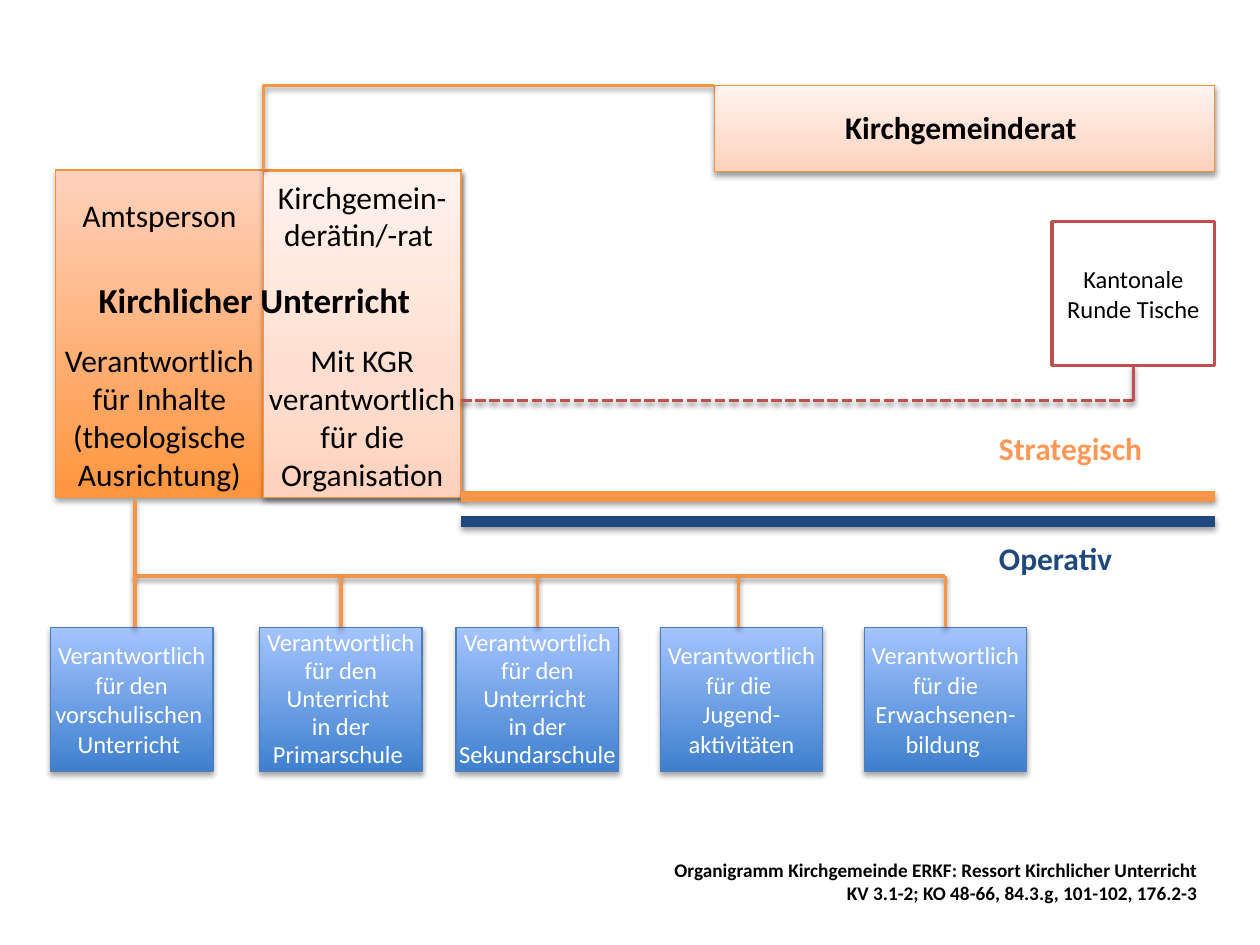
"""Build the organisation chart of the church education department."""
from copy import deepcopy

from lxml.etree import SubElement
from pptx import Presentation
from pptx.dml.color import RGBColor
from pptx.enum.dml import MSO_LINE
from pptx.enum.shapes import MSO_CONNECTOR as Link, MSO_SHAPE as Form
from pptx.enum.text import MSO_ANCHOR as Anchor, PP_ALIGN as Align
from pptx.oxml.ns import qn
from pptx.util import Inches, Pt

BLACK = RGBColor(0, 0, 0)
WHITE = RGBColor(255, 255, 255)
ORANGE = RGBColor(0xF7, 0x96, 0x46)
ORANGE_EDGE = RGBColor(0xF6, 0x92, 0x40)
ORANGE_TEXT = RGBColor(0xFF, 0x98, 0x56)
NAVY = RGBColor(0x1F, 0x49, 0x7D)
BLUE_EDGE = RGBColor(0x4B, 0x7E, 0xBC)
RED = RGBColor(0xC0, 0x50, 0x4D)
PEACH = RGBColor(0xFF, 0xD2, 0xBD)
DEEP_STOPS = [(0, RGBColor(0xFF, 0x95, 0x3E)), (1, PEACH)]
PALE_STOPS = [(0, PEACH), (0.35, RGBColor(0xFF, 0xDE, 0xD0)), (1, RGBColor(0xFF, 0xF2, 0xED))]
BLUE_STOPS = [(0, RGBColor(0x3F, 0x80, 0xCE)), (1, RGBColor(0xA4, 0xC4, 0xFF))]

NARROW = 0.02
UNIT_WIDTH, UNIT_HEIGHT, UNIT_TOP, BRANCH_TOP = 1.29, 1.14, 4.98, 4.57
STEM_X, RIGHT_EDGE, DEPARTMENT_RIGHT, DASH_Y = 1.07, 9.64, 3.66, 3.18

PANELS = [
    ((0.44, 1.35, 3.22, 2.6), Form.FLOWCHART_PROCESS, DEEP_STOPS),
    ((2.09, 1.36, 1.57, 2.59), Form.FLOWCHART_PROCESS, PALE_STOPS),
    ((5.67, 0.68, 3.97, 0.68), Form.RECTANGLE, PALE_STOPS),
]
LABELS = [
    ("Kirchlicher Unterricht ", (0.44, 2.16, 3.22, 0.44), dict(size=20, bold=True)),
    ("Mit KGR verantwortlich für die Organisation", (2.09, 2.66, 1.57, 1.31), dict(inset=NARROW)),
    ("Kirchgemein-derätin/-rat ", (2.09, 1.36, 1.57, 0.71), {}),
    ("Amtsperson", (0.44, 1.51, 1.65, 0.4), {}),
    ("Verantwortlich für Inhalte (theologische Ausrichtung)", (0.44, 2.66, 1.65, 1.31),
     dict(inset=NARROW)),
    ("Strategisch", (7.83, 3.36, 1.62, 0.4), dict(color=ORANGE_TEXT, bold=True, align=Align.LEFT)),
    ("Operativ", (7.83, 4.23, 1.68, 0.4), dict(color=NAVY, bold=True, align=Align.LEFT)),
    ("Kirchgemeinderat ", (5.67, 0.81, 3.97, 0.4), dict(bold=True)),
]
UNITS = [
    ("Verantwortlich für den vorschulischen  Unterricht ", 0.4, STEM_X, None),
    ("Verantwortlich für den Unterricht \vin der Primarschule ", 2.06, None, 0.95),
    ("Verantwortlich für den Unterricht \vin der Sekundarschule ", 3.62, None, 0.95),
    ("Verantwortlich für die \vJugend-aktivitäten", 5.24, 5.86, None),
    ("Verantwortlich für die\vErwachsenen-bildung ", 6.86, None, None),
]
LEVEL_BARS = [(3.94, ORANGE), (4.14, NAVY)]
TITLE = ("Organigramm Kirchgemeinde ERKF: Ressort Kirchlicher Unterricht \n"
         "KV 3.1-2; KO 48-66, 84.3.g, 101-102, 176.2-3 ")


def write(shape, text, size=18, color=BLACK, bold=False, align=Align.CENTER,
          anchor=Anchor.TOP, inset=0.1, spacing=None):
    frame = shape.text_frame
    frame.word_wrap = True
    frame.vertical_anchor = anchor
    frame.margin_left = frame.margin_right = Inches(inset)
    frame.margin_top = frame.margin_bottom = Inches(0.05)
    frame.text = text
    for paragraph in frame.paragraphs:
        paragraph.alignment = align
        paragraph.line_spacing = spacing
        for run in paragraph.runs:
            run.font.name, run.font.size, run.font.bold = "Calibri", Pt(size), bold
            run.font.color.rgb = color
        for line_break in paragraph._p.findall(qn("a:br")):
            line_break.insert(0, deepcopy(paragraph.runs[0]._r.rPr))


def add_shadow(properties, opacity, distance):
    effects = properties.find(qn("a:effectLst"))
    if effects is None:
        effects = SubElement(properties, qn("a:effectLst"))
    shadow = SubElement(effects, qn("a:outerShdw"), blurRad=str(Pt(3.1)),
                        dist=str(Pt(distance)), dir="5400000", rotWithShape="0")
    color = SubElement(shadow, qn("a:srgbClr"), val="000000")
    SubElement(color, qn("a:alpha"), val=str(opacity * 1000))


def add_box(slide, bounds, edge, stops=None, form=Form.RECTANGLE, weight=0.75):
    shape = slide.shapes.add_shape(form, *map(Inches, bounds))
    shape.shadow.inherit = False
    shape.line.color.rgb = edge
    shape.line.width = Pt(weight)
    if not stops:
        shape.fill.solid()
        shape.fill.fore_color.rgb = WHITE
        return shape
    shape.fill.gradient()
    shape.fill.gradient_angle = 90
    stop_list = shape._element.spPr.find(qn("a:gradFill")).find(qn("a:gsLst"))
    for _ in stops[2:]:
        stop_list.append(deepcopy(stop_list[-1]))
    for stop, (position, color) in zip(shape.fill.gradient_stops, stops):
        stop.position = position
        stop.color.rgb = color
    pale = stops is PALE_STOPS
    add_shadow(shape._element.spPr, 38 if pale else 35, 1.6 if pale else 1.8)
    return shape


def add_line(slide, start, end, color=ORANGE, weight=2, dash=None, bend=None):
    kind = Link.STRAIGHT if bend is None else Link.ELBOW
    line = slide.shapes.add_connector(kind, *map(Inches, (*start, *end)))
    line.line.color.rgb = color
    line.line.width = Pt(weight)
    if dash:
        line.line.dash_style = dash
    properties = line._element.spPr
    if bend is not None:
        guides = properties.find(qn("a:prstGeom")).find(qn("a:avLst"))
        SubElement(guides, qn("a:gd"), name="adj1", fmla=f"val {bend}")
    add_shadow(properties, 38, 1.6)
    return line


def main():
    presentation = Presentation()
    presentation.slide_width, presentation.slide_height = Inches(10), Inches(7.5)
    slide = presentation.slides.add_slide(presentation.slide_layouts[5])

    title = slide.shapes.title
    title.left, title.top, title.width, title.height = map(Inches, (4.67, 6.76, 4.97, 0.47))
    write(title, TITLE, size=11, bold=True, align=Align.RIGHT)

    for bounds, form, stops in PANELS:
        add_box(slide, bounds, ORANGE_EDGE, stops, form)
    for text, bounds, style in LABELS:
        write(slide.shapes.add_textbox(*map(Inches, bounds)), text, **style)

    add_line(slide, (5.67, 0.68), (2.09, 1.35), bend=100000)
    add_line(slide, (STEM_X, 3.97), (7.5, BRANCH_TOP), bend=0)
    for text, left, drop_x, spacing in UNITS:
        unit = add_box(slide, (left, UNIT_TOP, UNIT_WIDTH, UNIT_HEIGHT), BLUE_EDGE, BLUE_STOPS)
        write(unit, text, size=14, color=WHITE, anchor=Anchor.MIDDLE, inset=NARROW,
              spacing=spacing)
        x = drop_x or left + UNIT_WIDTH / 2
        drop = add_line(slide, (x, BRANCH_TOP), (x, UNIT_TOP))
        if drop_x is None:
            drop.end_connect(unit, 0)

    for y, color in LEVEL_BARS:
        add_line(slide, (DEPARTMENT_RIGHT, y), (RIGHT_EDGE, y), color, weight=6)

    round_tables = add_box(slide, (8.35, 1.76, UNIT_WIDTH, UNIT_HEIGHT), RED, weight=2)
    write(round_tables, "Kantonale Runde Tische ", size=14, anchor=Anchor.MIDDLE)
    middle = 8.35 + UNIT_WIDTH / 2
    add_line(slide, (DEPARTMENT_RIGHT, DASH_Y), (middle, DASH_Y), RED, dash=MSO_LINE.SQUARE_DOT)
    stem = add_line(slide, (middle, 2.9), (middle, DASH_Y), RED)
    stem.begin_connect(round_tables, 2)

    presentation.save("out.pptx")


if __name__ == "__main__":
    main()
